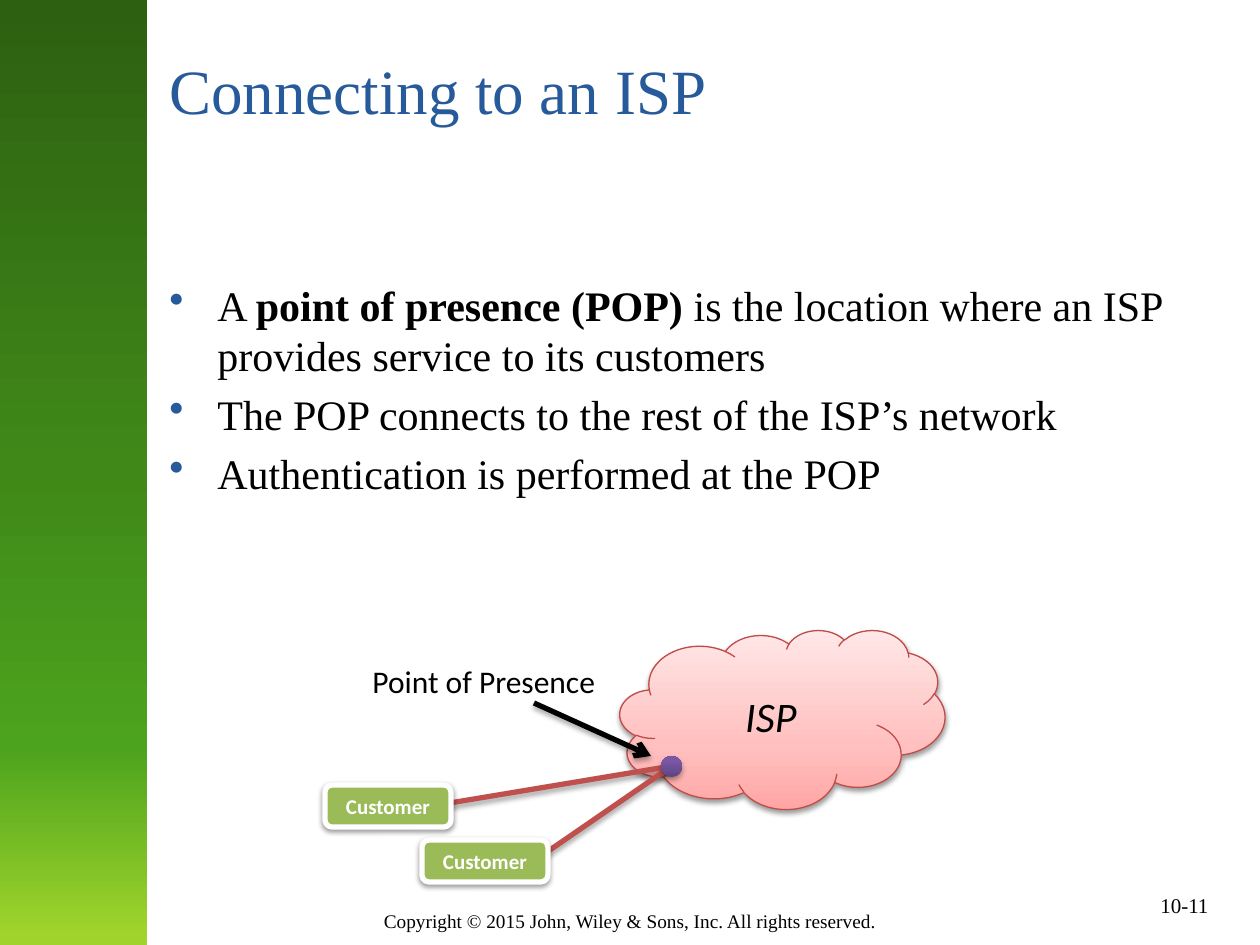
from lxml import etree
from pptx import Presentation
from pptx.dml.color import RGBColor
from pptx.enum.shapes import MSO_CONNECTOR, MSO_SHAPE
from pptx.enum.text import MSO_ANCHOR, PP_ALIGN
from pptx.oxml.ns import qn
from pptx.util import Emu, Pt

STRAIGHT = MSO_CONNECTOR.STRAIGHT
RECT, ROUNDED = MSO_SHAPE.RECTANGLE, MSO_SHAPE.ROUNDED_RECTANGLE
CLOUD, OVAL = MSO_SHAPE.CLOUD, MSO_SHAPE.OVAL
CENTER, MIDDLE = PP_ALIGN.CENTER, MSO_ANCHOR.MIDDLE
SERIF, SANS = "Times New Roman", "Calibri"

BLACK = RGBColor(0x00, 0x00, 0x00)
WHITE = RGBColor(0xFF, 0xFF, 0xFF)
BLUE = RGBColor(0x26, 0x5A, 0x9A)
RED = RGBColor(0xC0, 0x50, 0x4D)
CLOUD_EDGE = RGBColor(0xBF, 0x4C, 0x48)
GREEN = RGBColor(0x9B, 0xBB, 0x59)
BAND_STOPS = [(0, RGBColor(0x2D, 0x60, 0x11)), (50, RGBColor(0x40, 0x89, 0x19)),
              (79, RGBColor(0x4C, 0xA3, 0x1D)), (99, RGBColor(0xA0, 0xD4, 0x2C))]
CLOUD_STOPS = [(0, RGBColor(0xFF, 0xA6, 0xA5)), (35, RGBColor(0xFF, 0xC0, 0xBF)),
               (100, RGBColor(0xFF, 0xE7, 0xE7))]
POP_STOPS = [(0, RGBColor(0x5F, 0x44, 0x80)), (80, RGBColor(0x7B, 0x58, 0xA6)),
             (100, RGBColor(0x7C, 0x57, 0xA8))]

PX = 914400 / 126  # EMU per px


def px(*lengths):
    return [Emu(round(length * PX)) for length in lengths]


def style(shape, stops=None, angle=90, shadow=None):
    """Gradient stops and a soft shadow (opacity %, distance pt)."""
    props = shape._element.spPr
    if stops:
        shape.fill.gradient()
        shape.fill.gradient_angle = 360 - angle
        stop_list = props.find(qn("a:gradFill")).find(qn("a:gsLst"))
        for old in list(stop_list):
            stop_list.remove(old)
        for position, color in stops:
            stop = etree.SubElement(stop_list, qn("a:gs"), pos=str(position * 1000))
            etree.SubElement(stop, qn("a:srgbClr"), val=str(color))
    effects = props.find(qn("a:effectLst"))
    if effects is None:
        effects = etree.SubElement(props, qn("a:effectLst"))
    if shadow:
        opacity, distance = shadow
        outer = etree.SubElement(effects, qn("a:outerShdw"), blurRad=str(Pt(3.1)),
                                 dist=str(Pt(distance)), dir="5400000", rotWithShape="0")
        color = etree.SubElement(outer, qn("a:srgbClr"), val="000000")
        etree.SubElement(color, qn("a:alpha"), val=str(opacity * 1000))


prs = Presentation()
prs.slide_width, prs.slide_height = px(1260, 945)
slide = prs.slides.add_slide(prs.slide_layouts[6])
shapes = slide.shapes

# Green band on the left
band = shapes.add_shape(RECT, *px(-3, 0, 150, 945))
band.shadow.inherit = False
band.line.fill.background()
style(band, BAND_STOPS)

# ISP cloud
cloud = shapes.add_shape(CLOUD, *px(620, 630, 325, 179))
cloud.shadow.inherit = False
cloud.line.color.rgb = CLOUD_EDGE
cloud.line.width = Pt(0.75)
style(cloud, CLOUD_STOPS, 270, (38, 1.6))
cloud.text_frame.vertical_anchor = MIDDLE
isp = cloud.text_frame.paragraphs[0]
isp.text = "ISP"
isp.alignment = CENTER
isp.font.name, isp.font.size, isp.font.italic = SANS, Pt(24), True
isp.font.color.rgb = BLACK

# Title, footer, page number and diagram label
for text, box, wrap, size, font, color, align in [
    ("Connecting to an ISP", (157, 45, 1061, 157), True, 36, SERIF, BLUE, None),
    ("Copyright © 2015 John, Wiley & Sons, Inc. All rights reserved.",
     (0, 903, 1260, 37), True, 11, SERIF, BLACK, CENTER),
    ("10-11", (1148, 886, 78, 38), False, 12, SERIF, BLACK, None),
    ("Point of Presence", (360, 656, 248, 50), False, 18, SANS, BLACK, None),
]:
    frame = shapes.add_textbox(*px(*box)).text_frame
    frame.word_wrap = wrap
    line = frame.paragraphs[0]
    line.text = text
    line.alignment = align
    line.font.name, line.font.size = font, Pt(size)
    line.font.color.rgb = color

# Bullets
points = [
    [("A ", False), ("point of presence (POP) ", True),
     ("is the location where an ISP provides service to its customers", False)],
    [("The POP connects to the rest of the ISP’s network", False)],
    [("Authentication is performed at the POP", False)],
]
body = shapes.add_textbox(*px(157, 273, 1061, 619)).text_frame
body.word_wrap = True
indent, = px(48)
for number, runs in enumerate(points):
    point = body.add_paragraph() if number else body.paragraphs[0]
    props = point._p.get_or_add_pPr()
    props.set("marL", str(indent))
    props.set("indent", str(-indent))
    bullet_color = etree.SubElement(props, qn("a:buClr"))
    etree.SubElement(bullet_color, qn("a:srgbClr"), val=str(BLUE))
    etree.SubElement(props, qn("a:buChar"), char="•")
    if number:
        point.space_before = Pt(5)
    point.font.name, point.font.size = SERIF, Pt(24)
    point.font.color.rgb = BLACK
    for text, bold in runs:
        run = point.add_run()
        run.text = text
        if bold:
            run.font.bold = True

# Customers, each linked to the point of presence
for left, top, link_x, link_y in [(325, 785, 438, 805), (422, 840, 534, 861)]:
    link = shapes.add_connector(STRAIGHT, *px(link_x, link_y, 672, 766))
    link.line.color.rgb = RED
    link.line.width = Pt(3)
    style(link, shadow=(35, 1.8))

    customer = shapes.add_shape(ROUNDED, *px(left, top, 126, 42))
    customer.shadow.inherit = False
    customer.fill.solid()
    customer.fill.fore_color.rgb = GREEN
    customer.line.color.rgb = WHITE
    customer.line.width = Pt(3)
    style(customer, shadow=(38, 1.6))
    customer.text_frame.vertical_anchor = MIDDLE
    label = customer.text_frame.paragraphs[0]
    label.text = "Customer"
    label.alignment = CENTER
    label.font.name, label.font.size, label.font.bold = SANS, Pt(12), True
    label.font.color.rgb = WHITE

# Point of presence and the arrow to it
pop = shapes.add_shape(OVAL, *px(661, 756, 21, 21))
pop.shadow.inherit = False
pop.line.fill.background()
style(pop, POP_STOPS, 270, (35, 1.8))

arrow = shapes.add_connector(STRAIGHT, *px(534, 703, 651, 756))
arrow.line.color.rgb = BLACK
arrow.line.width = Pt(3)
etree.SubElement(arrow.line._get_or_add_ln(), qn("a:tailEnd"), type="arrow")
style(arrow, shadow=(35, 1.8))

prs.save("out.pptx")
